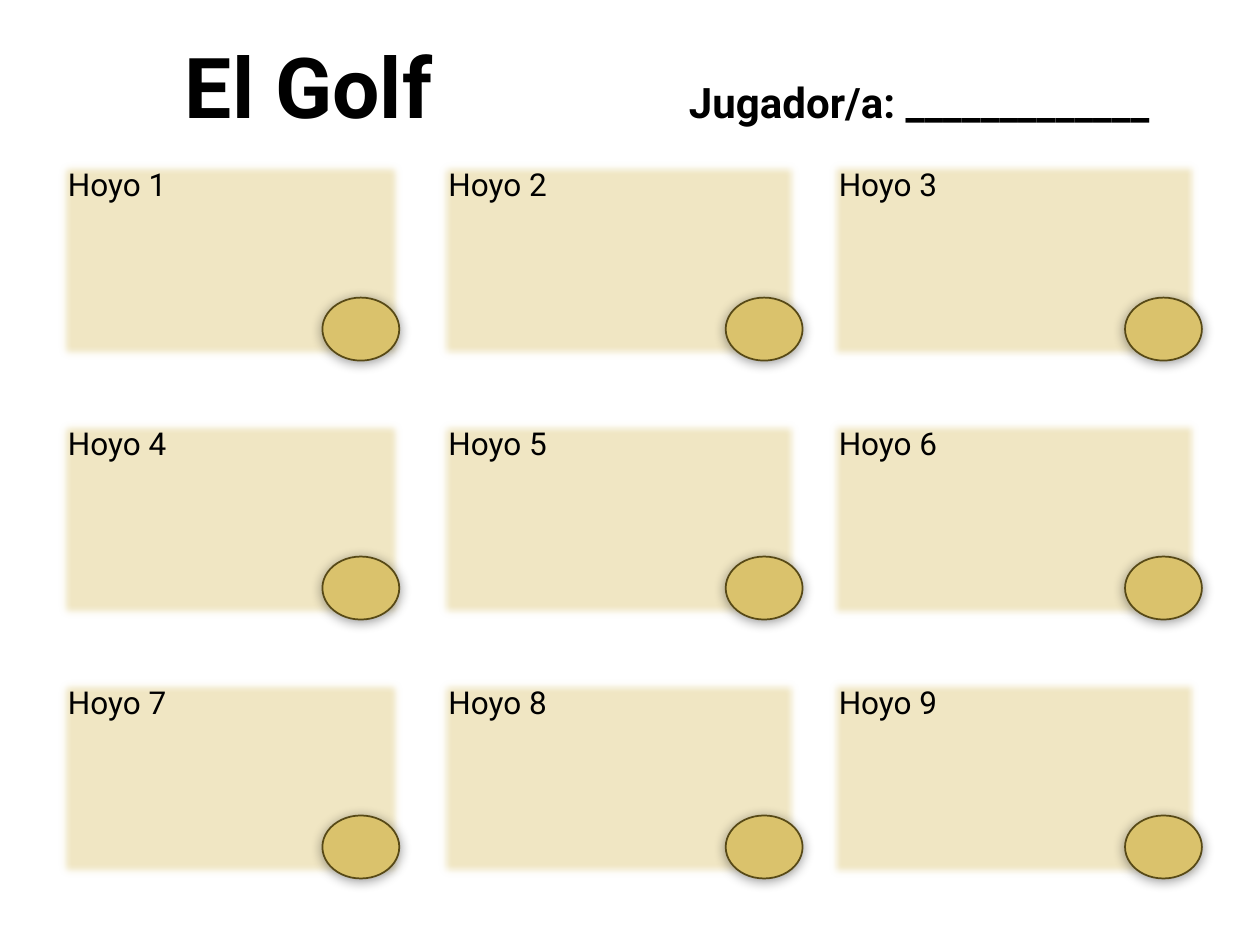
from lxml.etree import SubElement
from pptx import Presentation
from pptx.dml.color import RGBColor
from pptx.enum.shapes import MSO_SHAPE as Shape
from pptx.enum.text import MSO_ANCHOR as Anchor, PP_ALIGN as Align
from pptx.oxml.ns import qn
from pptx.util import Cm, Pt

# Content
TITLE = (("El Golf", 48), ("\tJugador/a: _____________", 24))
HOLE_LABEL = "Hoyo"

# Layout in cm: card left, card width, ball left for each column
COLUMNS = ((1.12, 7.06, 6.5), (8.79, 7.39, 14.63), (16.66, 7.57, 22.68))
ROWS = 3
FIRST_TOP, ROW_PITCH = 3.2, 5.22
CARD_HEIGHT = 4.11
BALL_WIDTH, BALL_HEIGHT, BALL_DROP = 1.55, 1.27, 2.8
PLAYER_TAB = 10.16

# Style
FONT = "Roboto"
BLACK = RGBColor(0x00, 0x00, 0x00)
SAND = RGBColor(0xF0, 0xE6, 0xC3)
GOLD = RGBColor(0xDA, 0xC2, 0x6C)
BROWN = RGBColor(0x57, 0x49, 0x16)


def style_run(run, size, bold=False):
    run.font.name = FONT
    run.font.size = Pt(size)
    run.font.bold = bold
    run.font.color.rgb = BLACK


def add_effect(shape, name, **attributes):
    shape.shadow.inherit = False
    effects = shape._element.spPr.find(qn("a:effectLst"))
    return SubElement(effects, qn(f"a:{name}"),
                      {key: str(value) for key, value in attributes.items()})


def add_filled(slide, kind, left, top, width, height, color):
    shape = slide.shapes.add_shape(kind, Cm(left), Cm(top), Cm(width), Cm(height))
    shape.fill.solid()
    shape.fill.fore_color.rgb = color
    return shape


def add_title(slide):
    box = slide.shapes.add_textbox(Cm(3.48), Cm(0.23), Cm(20.75), Cm(2.97))
    frame = box.text_frame
    frame.word_wrap = True
    frame.vertical_anchor = Anchor.MIDDLE
    paragraph = frame.paragraphs[0]
    for text, size in TITLE:
        run = paragraph.add_run()
        run.text = text
        style_run(run, size, bold=True)
    # Tab stop where the player's name begins
    tabs = SubElement(paragraph._p.get_or_add_pPr(), qn("a:tabLst"))
    SubElement(tabs, qn("a:tab"), pos=str(Cm(PLAYER_TAB)), algn="l")


def add_card(slide, number, left, top, width):
    card = add_filled(slide, Shape.RECTANGLE, left, top, width, CARD_HEIGHT, SAND)
    card.line.fill.background()
    add_effect(card, "softEdge", rad=Pt(5))
    frame = card.text_frame
    frame.text = f"{HOLE_LABEL} {number}"
    frame.vertical_anchor = Anchor.TOP
    frame.paragraphs[0].alignment = Align.LEFT
    style_run(frame.paragraphs[0].runs[0], 18)


def add_ball(slide, left, top):
    ball = add_filled(slide, Shape.OVAL, left, top, BALL_WIDTH, BALL_HEIGHT, GOLD)
    ball.line.color.rgb = BROWN
    ball.line.width = Pt(1)
    shadow = add_effect(ball, "outerShdw", blurRad=Pt(7), dist=Pt(1),
                        dir=5400000, rotWithShape=0)
    color = SubElement(shadow, qn("a:srgbClr"), val=str(BLACK))
    SubElement(color, qn("a:alpha"), val="40000")


def main():
    presentation = Presentation()
    presentation.slide_width, presentation.slide_height = Cm(25.4), Cm(19.05)
    slide = presentation.slides.add_slide(presentation.slide_layouts[6])
    add_title(slide)

    # Cards row by row, then the balls on top
    tops = [FIRST_TOP + row * ROW_PITCH for row in range(ROWS)]
    for row, top in enumerate(tops):
        for column, (left, width, _) in enumerate(COLUMNS):
            add_card(slide, row * len(COLUMNS) + column + 1, left, top, width)
    for _, _, ball_left in COLUMNS:
        for top in tops:
            add_ball(slide, ball_left, top + BALL_DROP)

    presentation.save("out.pptx")


if __name__ == "__main__":
    main()
